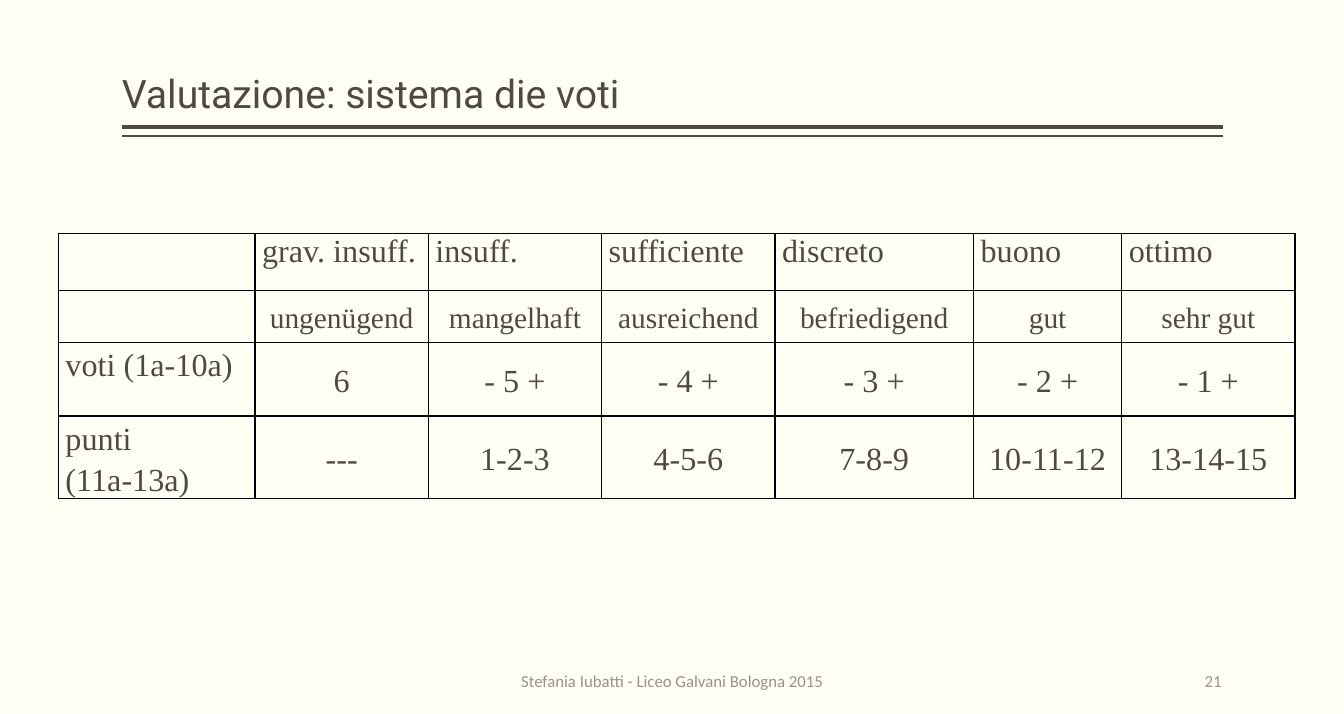
"""Build the slide with the table comparing Italian and German school grades."""
from dataclasses import dataclass

from lxml import etree
from pptx import Presentation
from pptx import util as u
from pptx.dml.color import RGBColor
from pptx.enum import shapes, text
from pptx.oxml.ns import qn

INK, MUTED, PAPER, BORDER = "514843", "9D8F88", "FFFFF3", "000000"
SLIDE_WIDTH, SLIDE_HEIGHT = 40 / 3, 18 / 2.54
LEFT, RIGHT = 1.21, 12.13
COL_WIDTHS = [1.95, 1.72, 1.72, 1.72, 1.97, 1.47, 1.72]
ALIGN, ANCHOR = text.PP_ALIGN, text.MSO_ANCHOR


@dataclass
class Rule:
    y: float
    weight: float


@dataclass
class Label:
    words: str
    left: float
    width: float
    align: ALIGN


@dataclass
class GradeRow:
    height: float
    size: float
    cells: list[str]
    heading: bool = False


RULES = [Rule(1.26, 3), Rule(1.35, 1)]
FOOTER = [
    Label("21", 10.12, 2, ALIGN.RIGHT),
    Label("Stefania Iubatti - Liceo Galvani Bologna 2015", 3.21, 6.92, ALIGN.CENTER),
]
ROWS = [
    GradeRow(0.56, 23, ["", "grav. insuff.", "insuff.", "sufficiente", "discreto",
                        "buono", "ottimo"], heading=True),
    GradeRow(0.52, 21, ["", "ungenügend", "mangelhaft", "ausreichend", "befriedigend",
                        "gut", "sehr gut"]),
    GradeRow(0.73, 23, ["voti (1a-10a)", "6", "- 5 +", "- 4 +", "- 3 +", "- 2 +", "- 1 +"]),
    GradeRow(0.77, 23, ["punti (11a-13a)", "---", "1-2-3", "4-5-6", "7-8-9",
                        "10-11-12", "13-14-15"]),
]


def paint(target, hex_color: str) -> None:
    """Give a fill a solid colour, or a font its colour."""
    if hasattr(target, "solid"):
        target.solid()
        target.fore_color.rgb = RGBColor.from_string(hex_color)
    else:
        target.color.rgb = RGBColor.from_string(hex_color)


def add_run(p, words: str, font: str, size: float, color: str) -> None:
    """Append one formatted run to a paragraph."""
    r = p.add_run()
    r.text = words
    r.font.name, r.font.size = font, u.Pt(size)
    paint(r.font, color)


def set_frame(tf, anchor: ANCHOR) -> None:
    """Set wrapping, insets and anchor of a text frame."""
    tf.word_wrap = True
    tf.auto_size = text.MSO_AUTO_SIZE.NONE
    tf.margin_left = tf.margin_right = 0
    tf.margin_top = tf.margin_bottom = u.Inches(0.05)
    tf.vertical_anchor = anchor


def add_title(s, words: str) -> None:
    """Place and fill the title placeholder."""
    sp = s.shapes.title
    sp.left, sp.top = u.Inches(LEFT), u.Inches(0.08)
    sp.width, sp.height = u.Inches(RIGHT - LEFT), u.Inches(1.13)
    set_frame(sp.text_frame, ANCHOR.BOTTOM)
    p = sp.text_frame.paragraphs[0]
    p.alignment, p.line_spacing = ALIGN.LEFT, 0.9
    add_run(p, words, "Roboto", 28, INK)


def add_rule(s, rule: Rule) -> None:
    """Draw one horizontal line under the title."""
    y = u.Inches(rule.y)
    sp = s.shapes.add_connector(shapes.MSO_CONNECTOR.STRAIGHT,
                                u.Inches(LEFT), y, u.Inches(RIGHT), y)
    sp.line.width = u.Pt(rule.weight)
    paint(sp.line.fill, INK)
    etree.SubElement(sp._element.spPr, qn("a:effectLst"))


def add_label(s, label: Label) -> None:
    """Add one footer text."""
    sp = s.shapes.add_textbox(u.Inches(label.left), u.Inches(6.57),
                              u.Inches(label.width), u.Inches(0.38))
    set_frame(sp.text_frame, ANCHOR.MIDDLE)
    p = sp.text_frame.paragraphs[0]
    p.alignment = label.align
    add_run(p, label.words, "Calibri", 12, MUTED)


def add_borders(cell) -> None:
    """Outline a table cell on all four sides."""
    tc_pr = cell._tc.get_or_add_tcPr()
    for side in ("lnL", "lnR", "lnT", "lnB"):
        ln = etree.SubElement(tc_pr, qn(f"a:{side}"), w=str(u.Pt(1)))
        fill = etree.SubElement(ln, qn("a:solidFill"))
        etree.SubElement(fill, qn("a:srgbClr"), val=BORDER)


def fill_cell(cell, words: str, row: GradeRow, is_label: bool) -> None:
    """Format one table cell and write its text."""
    add_borders(cell)
    cell.fill.background()
    cell.margin_left = cell.margin_right = u.Inches(0.07)
    cell.margin_top = cell.margin_bottom = 0
    if not words:
        return
    cell.vertical_anchor = ANCHOR.TOP if is_label else ANCHOR.MIDDLE
    p = cell.text_frame.paragraphs[0]
    p.alignment = ALIGN.JUSTIFY if is_label else ALIGN.CENTER
    p.line_spacing = 1.0 if row.heading else 1.15
    add_run(p, words, "Times New Roman", row.size, INK)


def add_grades(s) -> None:
    """Add the table of grades."""
    sp = s.shapes.add_table(len(ROWS), len(COL_WIDTHS), u.Inches(0.58), u.Inches(2.32),
                            u.Inches(sum(COL_WIDTHS)),
                            u.Inches(sum(row.height for row in ROWS)))
    table = sp.table
    table.first_row = table.horz_banding = False
    for col, width in zip(table.columns, COL_WIDTHS):
        col.width = u.Inches(width)
    for i, row in enumerate(ROWS):
        table.rows[i].height = u.Inches(row.height)
        for j, words in enumerate(row.cells):
            fill_cell(table.cell(i, j), words, row, row.heading or j == 0)


def main() -> None:
    """Build and save the presentation."""
    prs = Presentation()
    prs.slide_width, prs.slide_height = u.Inches(SLIDE_WIDTH), u.Inches(SLIDE_HEIGHT)
    s = prs.slides.add_slide(prs.slide_layouts[5])
    paint(s.background.fill, PAPER)
    for rule in RULES:
        add_rule(s, rule)
    add_title(s, "Valutazione: sistema die voti")
    add_grades(s)
    for label in FOOTER:
        add_label(s, label)
    prs.save("out.pptx")


if __name__ == "__main__":
    main()
